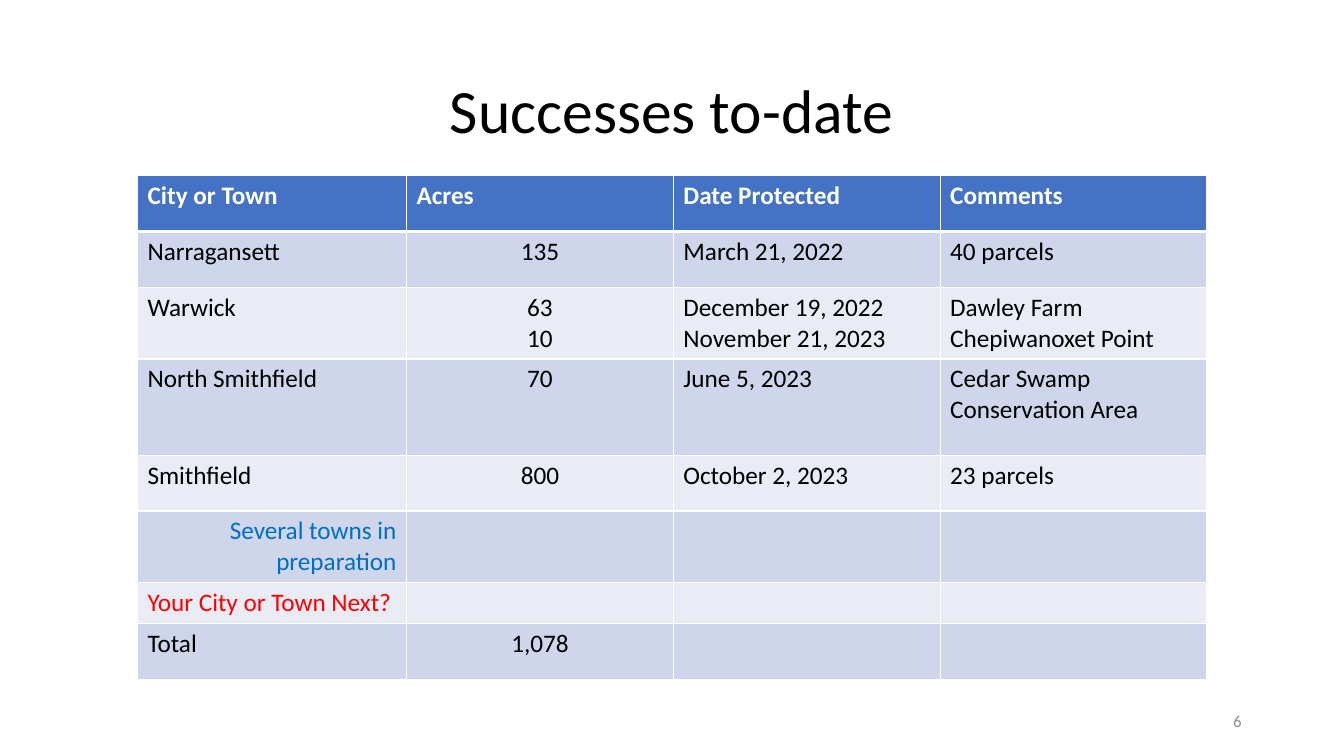
from lxml.etree import SubElement
from pptx import Presentation
from pptx.dml.color import RGBColor as RGB
from pptx.enum.text import MSO_ANCHOR as Anchor, PP_ALIGN as Align
from pptx.oxml.ns import qn
from pptx.util import Pt

# Content
TITLE = "Successes to-date"
PAGE_NUMBER = "6"
HEADER = ["City or Town", "Acres", "Date Protected", "Comments"]
TOWNS = [
    ["Narragansett", "135", "March 21, 2022", "40 parcels"],
    ["Warwick", "63\n10", "December 19, 2022\nNovember 21, 2023",
     "Dawley Farm\nChepiwanoxet Point"],
    ["North Smithfield", "70", "June 5, 2023", "Cedar Swamp Conservation Area"],
    ["Smithfield", "800", "October 2, 2023", "23 parcels"],
    ["Several towns in preparation", "", "", ""],
    ["Your City or Town Next?", "", "", ""],
    ["Total", "1,078", "", ""],
]
PREPARATION_ROW, NEXT_ROW = 5, 6
ACRES_COLUMN = 1

# Layout in points
SLIDE_SIZE = (960, 540)
TITLE_BOX = (66, 28.75, 828, 104.4)
TABLE_ORIGIN = (98.2, 125.6)
COLUMN_WIDTHS = [192.2, 190.6, 190.6, 190.6]
ROW_HEIGHTS = [39.8, 39.8, 51, 68.8, 39.8, 51, 29.2, 39.8]
NUMBER_BOX = (678, 500.5, 216, 28.75)

THEME = {
    "font": "Calibri",
    "title_size": 44, "table_size": 18, "number_size": 12,
    "text": "000000", "header_text": "FFFFFF", "number": "8C8C8C",
    "preparation": "0070C0", "next": "FF0000",
    "header_fill": "4472C4", "bands": ["E9EBF5", "CFD5EA"],
    "border": "FFFFFF", "thin": 1, "thick": 3,
}


def format_paragraph(paragraph, size, color, bold=False, **settings):
    for name, value in settings.items():
        setattr(paragraph, name, value)
    values = {"name": THEME["font"], "size": Pt(size), "bold": bold}
    for run in paragraph.runs:
        for name, value in values.items():
            setattr(run.font, name, value)
        run.font.color.rgb = RGB.from_string(color)


def place(shape, box):
    for name, value in zip(("left", "top", "width", "height"), box):
        setattr(shape, name, Pt(value))


def add_borders(cell, widths):
    properties = cell._tc.get_or_add_tcPr()
    for side, width in widths.items():
        line = SubElement(properties, qn(f"a:ln{side}"), w=str(Pt(width)))
        fill = SubElement(line, qn("a:solidFill"))
        SubElement(fill, qn("a:srgbClr"), val=THEME["border"])


def fill_cell(cell, row, column, text):
    # Borders, with a heavy rule under the header
    thin, thick = THEME["thin"], THEME["thick"]
    add_borders(cell, {"L": thin, "R": thin,
                       "T": thick if row == 1 else thin,
                       "B": thick if row == 0 else thin})
    # Header and banded fills
    is_header = row == 0
    fill = THEME["header_fill"] if is_header else THEME["bands"][row % 2]
    cell.fill.solid()
    cell.fill.fore_color.rgb = RGB.from_string(fill)
    # Text
    color = {0: THEME["header_text"], PREPARATION_ROW: THEME["preparation"],
             NEXT_ROW: THEME["next"]}.get(row, THEME["text"])
    alignment = Align.LEFT
    if column == ACRES_COLUMN and not is_header:
        alignment = Align.CENTER
    elif row == PREPARATION_ROW:
        alignment = Align.RIGHT
    cell.text = text
    for paragraph in cell.text_frame.paragraphs:
        format_paragraph(paragraph, THEME["table_size"], color, is_header,
                         alignment=alignment)


def main():
    presentation = Presentation()
    presentation.slide_width, presentation.slide_height = map(Pt, SLIDE_SIZE)
    slide = presentation.slides.add_slide(presentation.slide_layouts[5])

    # Title
    title = slide.shapes.title
    place(title, TITLE_BOX)
    title.text_frame.text = TITLE
    title.text_frame.vertical_anchor = Anchor.MIDDLE
    format_paragraph(title.text_frame.paragraphs[0], THEME["title_size"],
                     THEME["text"], alignment=Align.CENTER, line_spacing=0.9)

    # Table of protected land
    rows = [HEADER] + TOWNS
    size = (sum(COLUMN_WIDTHS), sum(ROW_HEIGHTS))
    table = slide.shapes.add_table(len(rows), len(HEADER),
                                   *map(Pt, TABLE_ORIGIN + size)).table
    for column, width in zip(table.columns, COLUMN_WIDTHS):
        column.width = Pt(width)
    for row, height in zip(table.rows, ROW_HEIGHTS):
        row.height = Pt(height)
    for row, texts in enumerate(rows):
        for column, text in enumerate(texts):
            fill_cell(table.cell(row, column), row, column, text)

    # Slide number
    number = slide.shapes.add_textbox(*map(Pt, NUMBER_BOX)).text_frame
    number.word_wrap = True
    number.vertical_anchor = Anchor.MIDDLE
    number.text = PAGE_NUMBER
    format_paragraph(number.paragraphs[0], THEME["number_size"],
                     THEME["number"], alignment=Align.RIGHT)

    presentation.save("out.pptx")


if __name__ == "__main__":
    main()
